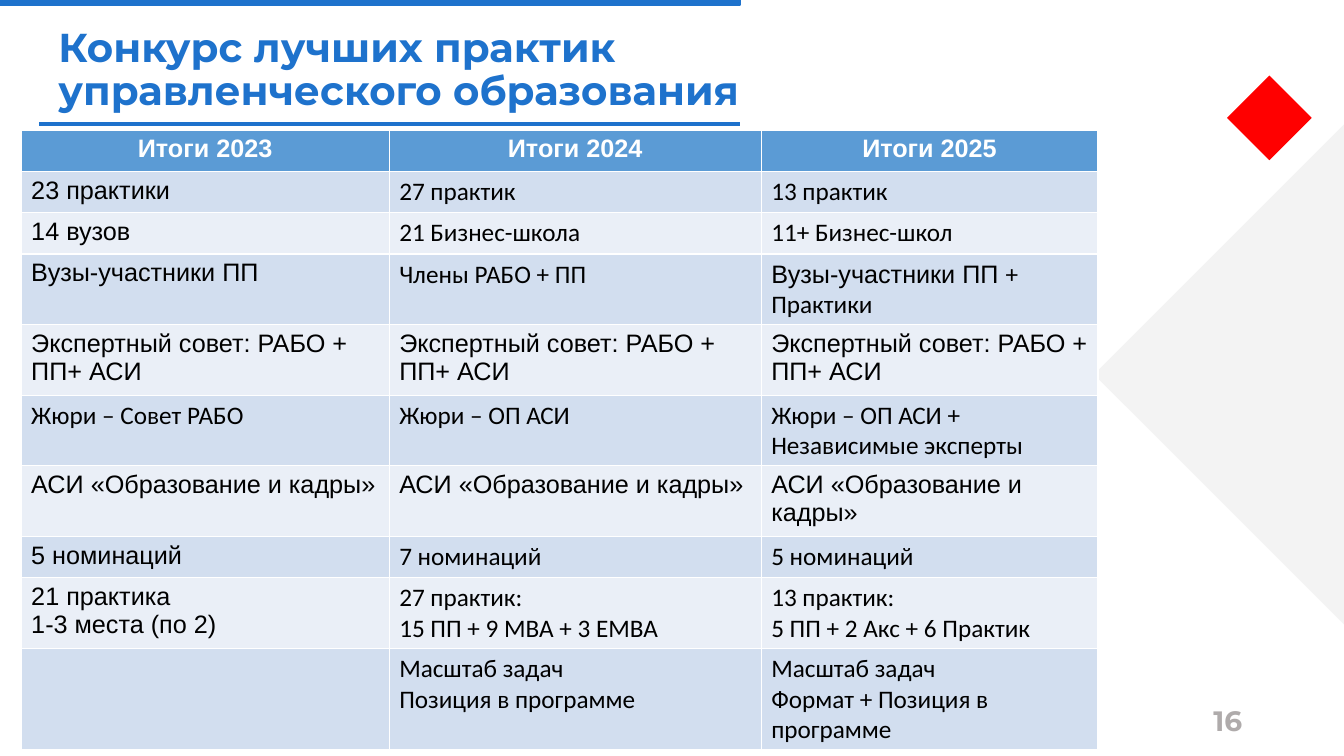
from pptx import Presentation
from pptx.dml.color import RGBColor
from pptx.enum.shapes import MSO_CONNECTOR, MSO_SHAPE
from pptx.enum.text import MSO_ANCHOR, MSO_AUTO_SIZE, PP_ALIGN
from pptx.oxml.ns import qn
from pptx.util import Inches, Pt
from lxml import etree

BLUE, RED, GREY, PALE = "1E72CC", "FF0000", "AFABAB", "E6E6E6"
HEADER_FILL, BAND_FILLS = "5B9BD5", ("EAEFF7", "D2DEEF")
COLUMN_WIDTHS = (3.65, 3.69, 3.34)
ROW_HEIGHT = 0.41
FONTS = {"A": "Arial", "C": "Calibri"}
COUNCIL = "Экспертный совет: РАБО + ПП+ АСИ"
AGENCY = "АСИ «Образование и кадры»"

# Each row: one font letter per column, then the cells.
# "|" switches the cell from Arial to Calibri, "\v" breaks a line.
RESULTS = [
    ("AAA", "Итоги 2023", "Итоги 2024", "Итоги 2025"),
    ("ACC", "23 практики", "27 практик", "13 практик"),
    ("ACC", "14 вузов", "21 Бизнес-школа", "11+ Бизнес-школ"),
    ("ACA", "Вузы-участники ПП", "Члены РАБО + ПП",
     "Вузы-участники ПП |+ \vПрактики"),
    ("AAA", COUNCIL, COUNCIL, COUNCIL),
    ("CCC", "Жюри – Совет РАБО", "Жюри – ОП АСИ",
     "Жюри – ОП АСИ + Независимые эксперты"),
    ("AAA", AGENCY, AGENCY, AGENCY),
    ("ACC", "5 номинаций", "7 номинаций", "5 номинаций"),
    ("ACC", "21 практика\n1-3 места (по 2)",
     "27 практик:\n15 ПП + 9 МВА + 3 ЕМВА",
     "13 практик:\v5 ПП + 2 Акс + 6 Практик"),
    ("CCC", "", "Масштаб задач\nПозиция в программе",
     "Масштаб задач\nФормат + Позиция в программе"),
]


def color(value):
    return RGBColor.from_string(value)


def inches(box):
    return [Inches(length) for length in box]


def style_font(font, name, size, value, bold=False):
    font.name, font.size, font.bold = name, Pt(size), bold
    font.color.rgb = color(value)


def add_block(page, kind, box, fill, outlined=False):
    block = page.shapes.add_shape(kind, *inches(box))
    block.shadow.inherit = False
    block.fill.solid()
    block.fill.fore_color.rgb = color(fill)
    if outlined:
        block.line.color.rgb = color(fill)
        block.line.width = Pt(1)
    else:
        block.line.fill.background()
    return block


def add_decor(page):
    add_block(page, MSO_SHAPE.RECTANGLE, (0, 0, 7.34, 0.05), BLUE, outlined=True)
    backdrop = add_block(page, MSO_SHAPE.DIAMOND, (10.85, 1.23, 4.97, 4.97), PALE)
    tint = backdrop.fill._xPr.find(qn("a:solidFill"))[0]
    etree.SubElement(tint, qn("a:alpha"), val="46000")
    add_block(page, MSO_SHAPE.DIAMOND, (12.17, 0.75, 0.84, 0.84), RED)

    rule = page.shapes.add_connector(
        MSO_CONNECTOR.STRAIGHT, *inches((0.39, 1.23, 7.34, 1.23)))
    rule.line.color.rgb = color(BLUE)
    rule.line.width = Pt(2.25)
    etree.SubElement(rule._element.spPr, qn("a:effectLst"))


def fill_title(page, box):
    title = page.shapes.title
    title.left, title.top, title.width, title.height = inches(box)
    frame = title.text_frame
    frame.text = "Конкурс лучших практик \vуправленческого образования"
    frame.auto_size = MSO_AUTO_SIZE.NONE
    frame.vertical_anchor = MSO_ANCHOR.MIDDLE
    para = frame.paragraphs[0]
    para.alignment = PP_ALIGN.LEFT
    para.line_spacing = 0.9
    for run in para.runs:
        style_font(run.font, "Montserrat", 28.8, BLUE, bold=True)


def add_page_number(page, box):
    frame = page.shapes.add_textbox(*inches(box)).text_frame
    frame.word_wrap = True
    frame.vertical_anchor = MSO_ANCHOR.MIDDLE
    frame.text = "16"
    para = frame.paragraphs[0]
    para.alignment = PP_ALIGN.RIGHT
    style_font(para.runs[0].font, "Montserrat", 20, GREY, bold=True)


def write_line(para, line, font, header):
    """Add the runs of one paragraph, minding font switches and breaks."""
    for part, letter in zip(line.split("|"), (font, "C")):
        for number, piece in enumerate(part.split("\v")):
            if number:
                para.add_line_break()
            run = para.add_run()
            run.text = piece
            style_font(run.font, FONTS[letter], 18,
                       "FFFFFF" if header else "000000", bold=header)
    if header:
        para.alignment = PP_ALIGN.CENTER


def add_results(page, left, top):
    box = (left, top, sum(COLUMN_WIDTHS), ROW_HEIGHT * len(RESULTS))
    table = page.shapes.add_table(
        len(RESULTS), len(COLUMN_WIDTHS), *inches(box)).table
    for column, width in zip(table.columns, COLUMN_WIDTHS):
        column.width = Inches(width)
    for index, (fonts, *texts) in enumerate(RESULTS):
        header = index == 0
        for position, (font, text) in enumerate(zip(fonts, texts)):
            cell = table.cell(index, position)
            cell.fill.solid()
            cell.fill.fore_color.rgb = color(
                HEADER_FILL if header else BAND_FILLS[index % 2])
            frame = cell.text_frame
            for number, line in enumerate(text.split("\n") if text else []):
                para = frame.add_paragraph() if number else frame.paragraphs[0]
                write_line(para, line, font, header)


def main():
    deck = Presentation()
    deck.slide_width, deck.slide_height = Inches(13.33), Inches(7.5)
    page = deck.slides.add_slide(deck.slide_layouts[5])
    add_decor(page)
    fill_title(page, (0.48, 0.39, 11.5, 0.63))
    add_page_number(page, (9.42, 6.95, 3, 0.4))
    add_results(page, 0.21, 1.29)
    deck.save("out.pptx")


if __name__ == "__main__":
    main()
